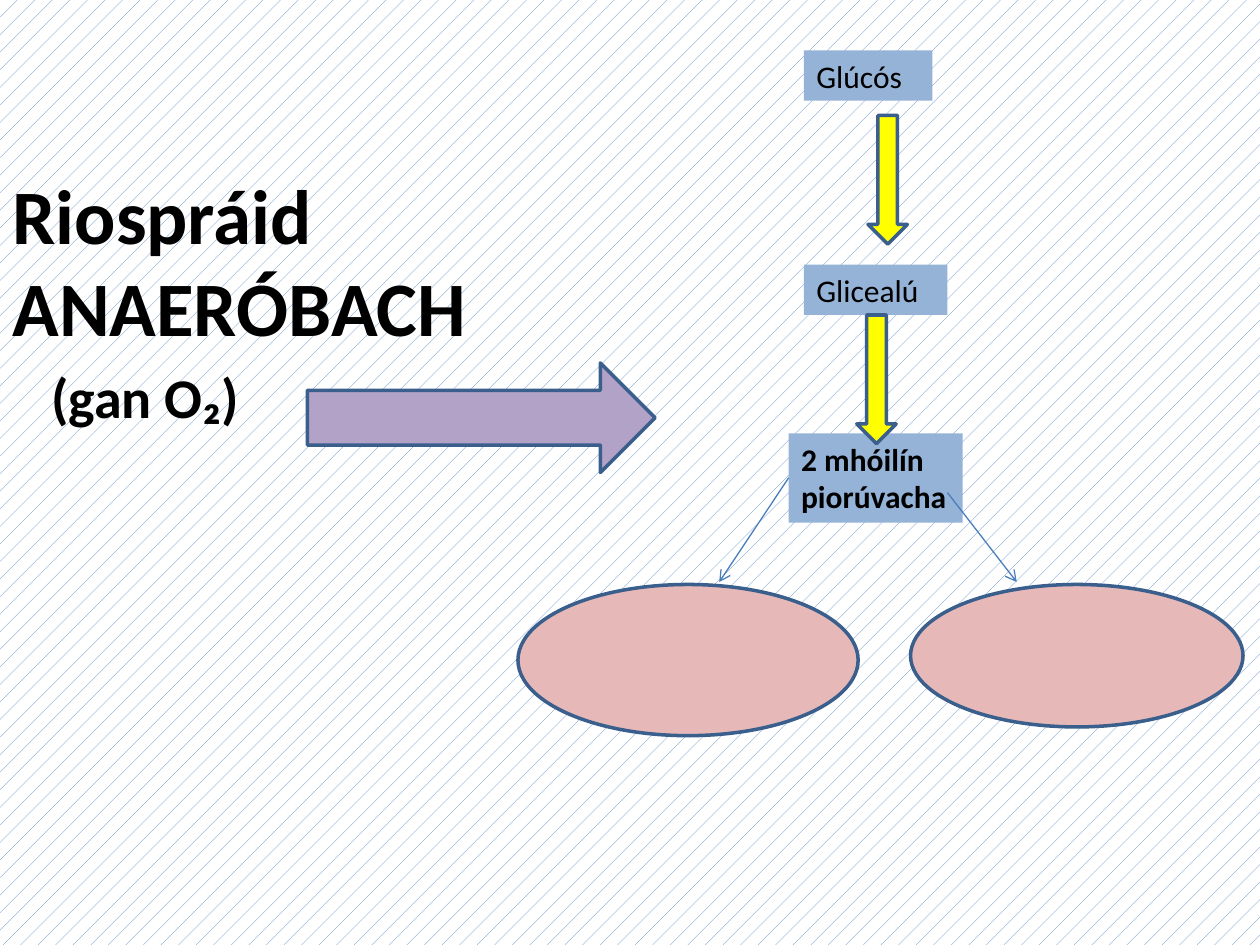
from lxml import etree
from pptx import Presentation
from pptx.dml.color import RGBColor
from pptx.enum import dml, shapes, text
from pptx.oxml.ns import qn
from pptx.util import Pt

MSO = shapes.MSO_SHAPE


def color(value):
    return RGBColor.from_string(value)


def add_shape(kind, box, fill, outlined=True):
    sp = s.shapes.add_shape(kind, *map(Pt, box))
    sp.shadow.inherit = False
    sp.fill.solid()
    sp.fill.fore_color.rgb = color(fill)
    if outlined:
        sp.line.color.rgb = color("3A5F8C")
        sp.line.width = Pt(2)
    else:
        sp.line.fill.background()
    return sp


prs = Presentation()
prs.slide_width, prs.slide_height = Pt(720), Pt(540)
s = prs.slides.add_slide(prs.slide_layouts[1])
bg = s.background.fill
bg.patterned()
bg.pattern = dml.MSO_PATTERN.PERCENT_5
bg.fore_color.rgb = color("4F81BD")
bg.back_color.rgb = color("FFFFFF")

title, body = s.placeholders
title.element.getparent().remove(title.element)
body.left, body.top, body.width, body.height = Pt(0), Pt(92), Pt(332), Pt(390)
tf = body.text_frame
tf.auto_size = text.MSO_AUTO_SIZE.NONE
tf.text = "Riospráid ANAERÓBACH\n(gan O₂)"
for p, size, before, margin in zip(tf.paragraphs, (44, 32), (0, 6), (0, 22)):
    p.space_before = Pt(before)
    p.font.name, p.font.size, p.font.bold = "Calibri", Pt(size), True
    p.font.color.rgb = color("000000")
    pPr = p._p.get_or_add_pPr()
    pPr.set("marL", str(Pt(margin)))
    pPr.set("indent", "0")
    pPr.insert_element_before(etree.Element(qn("a:buNone")), "a:tabLst", "a:defRPr", "a:extLst")

add_shape(MSO.RIGHT_ARROW, (175.7, 207.4, 198.7, 62.6), "B3A2C7")

stages = [
    ("Glúcós", (459.4, 28.8, 73.4, 28.8), False),
    ("2 mhóilín piorúvacha", (450.7, 247.7, 99.4, 51), True),
    ("Glicealú", (459.4, 151.2, 82, 28.8), False),
]
for label, box, bold in stages:
    sp = add_shape(MSO.RECTANGLE, box, "95B3D7", outlined=False)
    tf = sp.text_frame
    tf.word_wrap = True
    tf.vertical_anchor = text.MSO_ANCHOR.TOP
    tf.text = label
    p = tf.paragraphs[0]
    p.alignment = text.PP_ALIGN.LEFT
    p.font.name, p.font.size, p.font.bold = "Calibri", Pt(18), bold
    p.font.color.rgb = color("000000")

for box in ((296, 334, 194.4, 86.4), (520.3, 334, 190, 81.4)):
    add_shape(MSO.OVAL, box, "E6B9B8")

for left, top in ((496, 66), (489.6, 180)):
    add_shape(MSO.DOWN_ARROW, (left, top, 22.5, 73.5), "FFFF00")

for ends in ((450.7, 273, 411, 332.6), (541.4, 281.5, 581, 332.6)):
    cx = s.shapes.add_connector(shapes.MSO_CONNECTOR.STRAIGHT, *map(Pt, ends))
    cx.line.color.rgb = color("4B7EBC")
    cx.line.width = Pt(0.75)
    etree.SubElement(cx.line._get_or_add_ln(), qn("a:tailEnd"), type="arrow")
    etree.SubElement(cx._element.spPr, qn("a:effectLst"))

prs.save("out.pptx")
